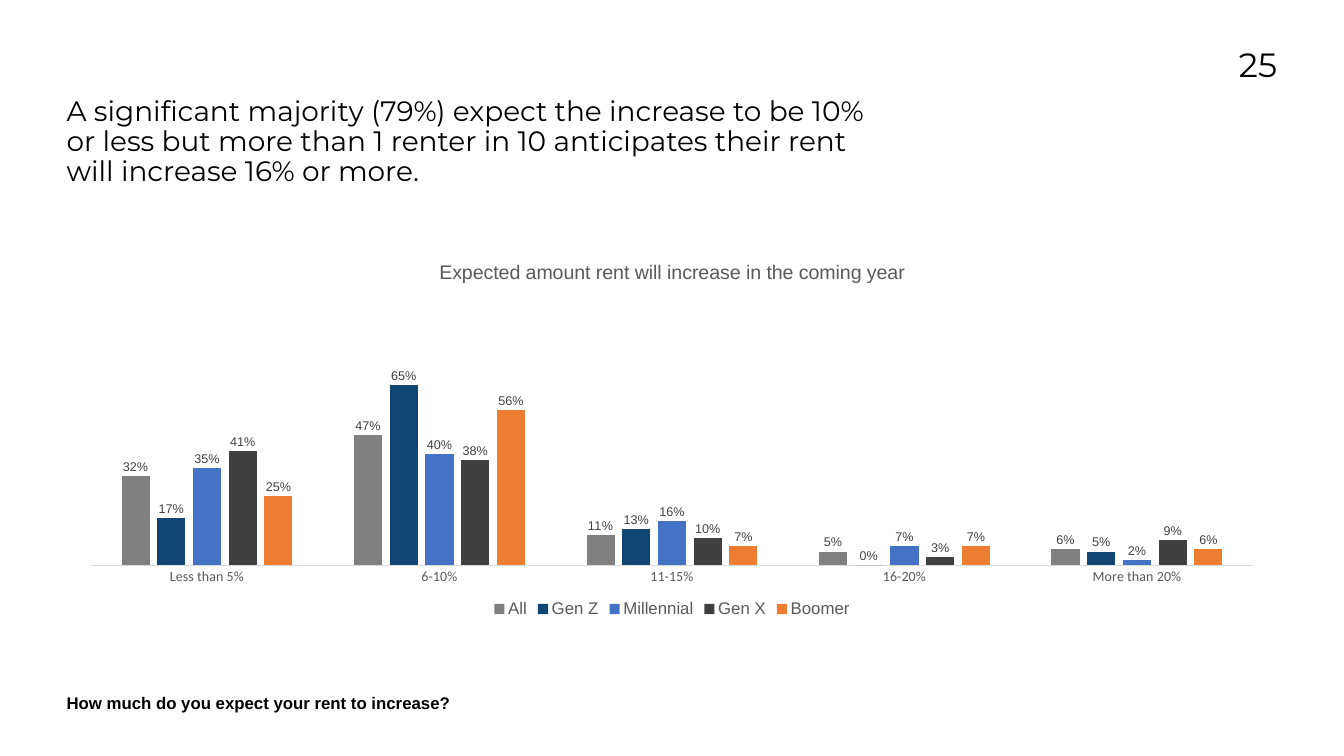
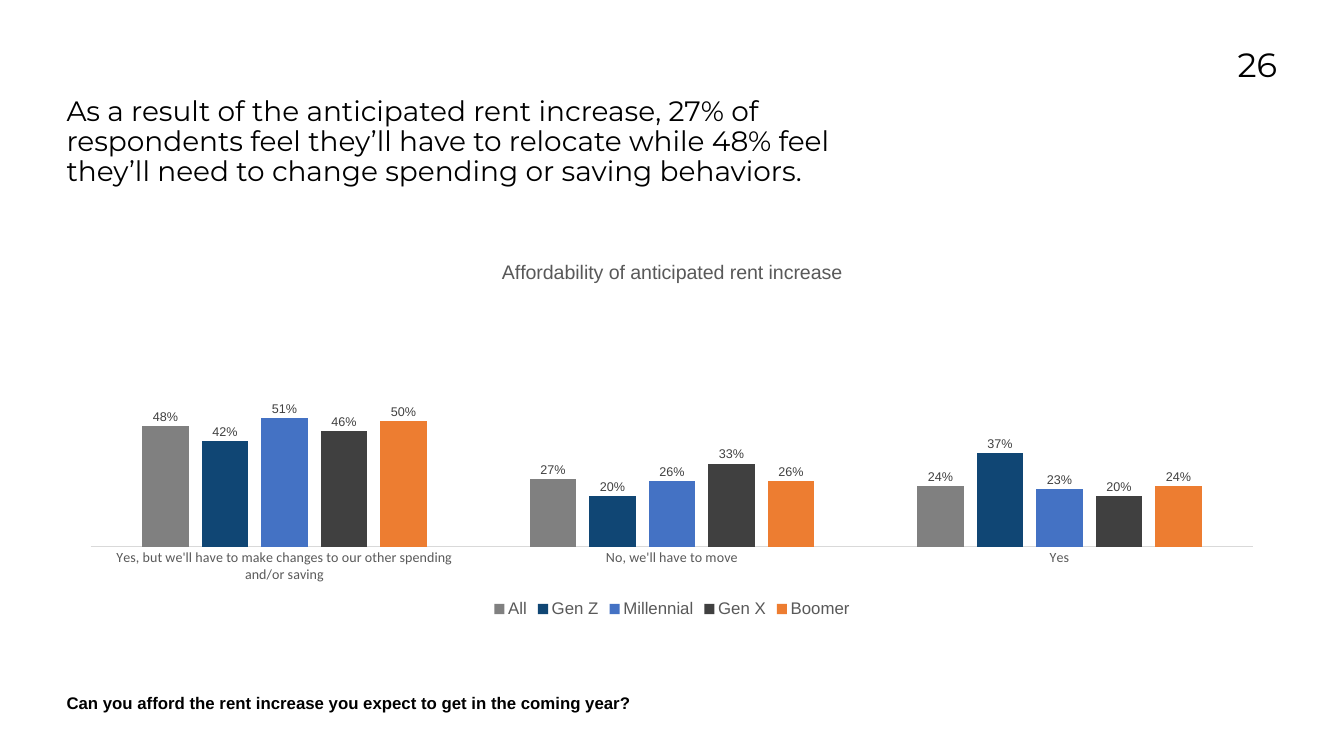
import pptx
import pptx.util
import pptx.chart.data
import pptx.dml.color
import pptx.enum.chart
import pptx.enum.text
import pptx.oxml
import pptx.oxml.ns
from dataclasses import dataclass

Pt = pptx.util.Pt
Inches = pptx.util.Inches
XL = pptx.enum.chart
ALIGN = pptx.enum.text.PP_ALIGN


@dataclass(frozen=True)
class Theme:
    width: float = 26.67
    height: float = 15
    ink: str = "000000"
    muted: str = "595959"
    label: str = "404040"
    rule: str = "D9D9D9"
    display: str = "Montserrat"
    body: str = "Arial"
    axis: str = "Calibri"
    number_size: int = 48
    heading_size: int = 40
    title_size: int = 28
    note_size: int = 24
    axis_size: int = 20
    label_size: int = 18


T = Theme()

# Generations surveyed, each with its bar colour
GENERATIONS = {"All": "808080", "Gen Z": "104674", "Millennial": "4472C4",
               "Gen X": "404040", "Boomer": "ED7D31"}

# Boxes shared by the slides: left, top, width, height in percent of the slide
NUMBER_BOX = (86.58, 5.87, 8.44, 10.93)
HEADING_BOX = (4.95, 12.87, 60.03, 13.87)
CHART_BOX = (4.95, 32.53, 90.1, 49.73)
QUESTION_BOX = (4.95, 90.33, 49.76, 4.33)

# Plot area is (top, height) as a share of the chart
SLIDES = [
    dict(number="25",
         heading="A significant majority (79%) expect the increase to be 10% or less "
                 "but more than 1 renter in 10 anticipates their rent will increase "
                 "16% or more.",
         title="Expected amount rent will increase in the coming year",
         plot=(0.11, 0.74),
         categories=["Less than 5%", "6-10%", "11-15%", "16-20%", "More than 20%"],
         percents=[(32, 47, 11, 5, 6), (17, 65, 13, 0, 5), (35, 40, 16, 7, 2),
                   (41, 38, 10, 3, 9), (25, 56, 7, 7, 6)],
         question="How much do you expect your rent to increase?"),
    dict(number="26",
         heading="As a result of the anticipated rent increase, 27% of respondents "
                 "feel they’ll have to relocate while 48% feel they’ll need to change "
                 "spending or saving behaviors.",
         title="Affordability of anticipated rent increase",
         plot=(0.13, 0.67),
         categories=["Yes, but we'll have to make changes to our other spending "
                     "and/or saving", "No, we'll have to move", "Yes"],
         percents=[(48, 27, 24), (42, 20, 37), (51, 26, 23), (46, 33, 20),
                   (50, 26, 24)],
         question="Can you afford the rent increase you expect to get in the "
                  "coming year?"),
]


def rgb(value):
    return pptx.dml.color.RGBColor.from_string(value)


def place(box):
    """Turn percentages of the slide into lengths."""
    sides = (T.width, T.height) * 2
    return [Inches(share * side / 100) for share, side in zip(box, sides)]


def style(font, name, size, color, bold=False):
    font.name, font.size, font.bold = name, Pt(size), bold
    font.color.rgb = rgb(color)


def add_text(s, box, text, name, size, bold=False, align=ALIGN.LEFT, spacing=1.0):
    tf = s.shapes.add_textbox(*place(box)).text_frame
    tf.word_wrap = True
    tf.margin_left = tf.margin_top = tf.margin_right = tf.margin_bottom = 0
    p = tf.paragraphs[0]
    p.text = text
    p.alignment = align
    p.line_spacing = spacing
    style(p.runs[0].font, name, size, T.ink, bold)


def set_plot_area(chart, top, height):
    """Fix the inner plot area, so that bars keep their scale."""
    area = chart._chartSpace.chart.plotArea
    for old in area.findall(pptx.oxml.ns.qn("c:layout")):
        area.remove(old)
    items = [("layoutTarget", "inner"), ("xMode", "edge"), ("yMode", "edge"),
             ("x", 0.02), ("y", top), ("w", 0.96), ("h", height)]
    inner = "".join(f'<c:{tag} val="{val}"/>' for tag, val in items)
    area.insert(0, pptx.oxml.parse_xml(
        f'<c:layout {pptx.oxml.ns.nsdecls("c")}>'
        f'<c:manualLayout>{inner}</c:manualLayout></c:layout>'))


def add_column_chart(s, title, categories, percents, plot_area):
    data = pptx.chart.data.CategoryChartData(number_format="0%")
    data.categories = categories
    for name, values in zip(GENERATIONS, percents):
        data.add_series(name, [v / 100 for v in values])
    chart = s.shapes.add_chart(XL.XL_CHART_TYPE.COLUMN_CLUSTERED,
                               *place(CHART_BOX), data).chart
    style(chart.font, T.axis, 10, T.ink)

    # Title and legend
    p = chart.chart_title.text_frame.paragraphs[0]
    p.text = title
    style(p.runs[0].font, T.body, T.title_size, T.muted)
    chart.chart_title.include_in_layout = False
    chart.has_legend = True
    chart.legend.position = XL.XL_LEGEND_POSITION.BOTTOM
    chart.legend.include_in_layout = False
    style(chart.legend.font, T.body, T.note_size, T.muted)

    # Axes
    axis = chart.category_axis
    axis.major_tick_mark = axis.minor_tick_mark = XL.XL_TICK_MARK.NONE
    axis.format.line.color.rgb = rgb(T.rule)
    axis.format.line.width = Pt(0.75)
    style(axis.tick_labels.font, T.axis, T.axis_size, T.muted)
    scale = chart.value_axis
    scale.minimum_scale, scale.maximum_scale = 0, 1
    scale.has_major_gridlines = False
    scale.tick_labels.number_format = "0%"
    scale.tick_labels.number_format_is_linked = False
    scale.visible = False

    # Bars and their labels
    plot = chart.plots[0]
    plot.vary_by_categories = False
    plot.gap_width, plot.overlap = 219, -27
    for series, color in zip(plot.series, GENERATIONS.values()):
        series.format.fill.solid()
        series.format.fill.fore_color.rgb = rgb(color)
        labels = series.data_labels
        labels.show_value = True
        labels.number_format = "0%"
        labels.number_format_is_linked = False
        labels.position = XL.XL_LABEL_POSITION.OUTSIDE_END
        style(labels.font, T.body, T.label_size, T.label)
    set_plot_area(chart, *plot_area)


def add_survey_slide(prs, number, heading, title, plot, categories, percents, question):
    s = prs.slides.add_slide(prs.slide_layouts[6])
    add_text(s, NUMBER_BOX, number, T.display, T.number_size, align=ALIGN.RIGHT)
    add_column_chart(s, title, categories, percents, plot)
    add_text(s, HEADING_BOX, heading, T.display, T.heading_size, spacing=0.9)
    add_text(s, QUESTION_BOX, question, T.body, T.note_size, bold=True, spacing=1.5)


def main():
    prs = pptx.Presentation()
    prs.slide_width, prs.slide_height = Inches(T.width), Inches(T.height)
    for content in SLIDES:
        add_survey_slide(prs, **content)
    prs.save("out.pptx")


if __name__ == "__main__":
    main()
